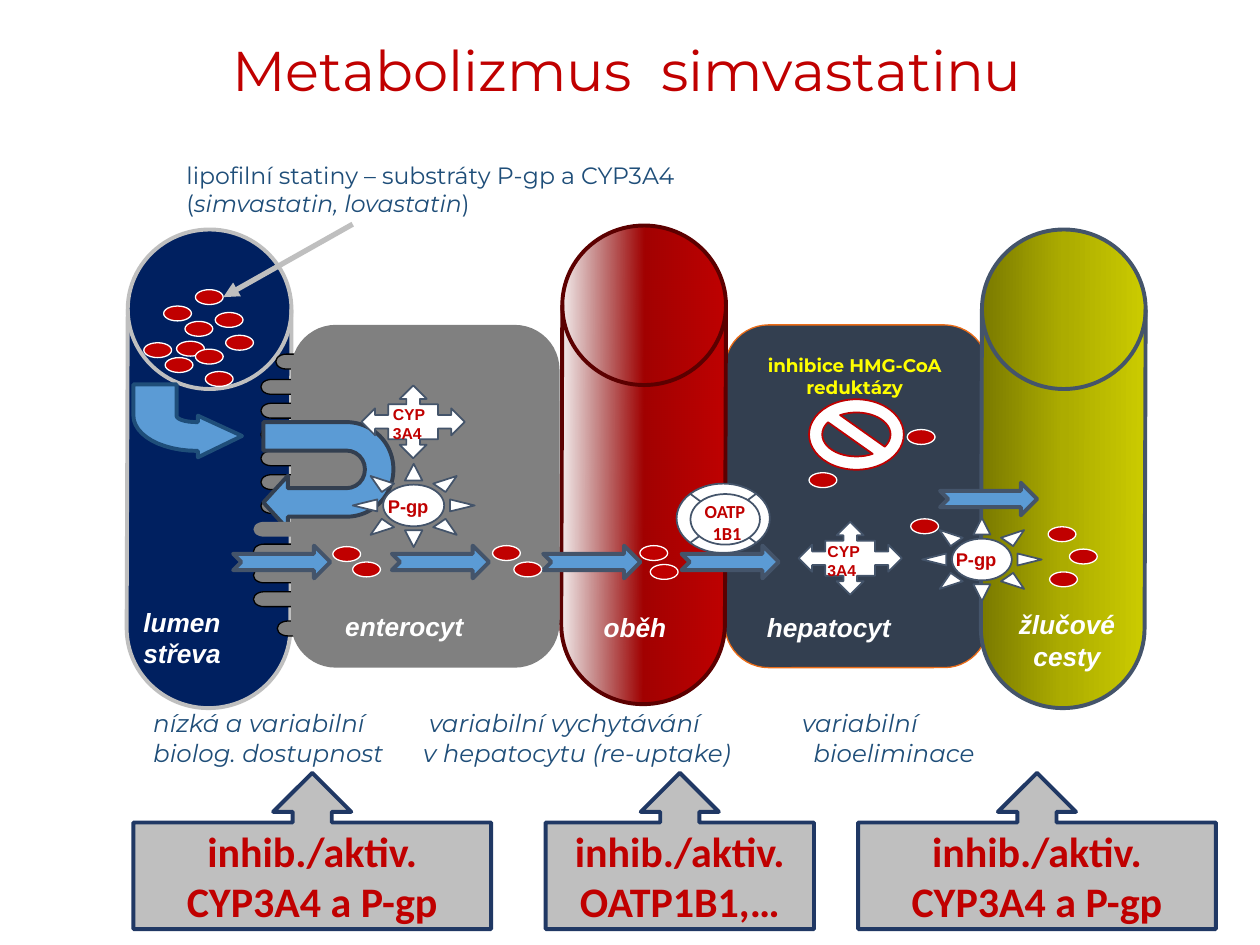
"""Build a one-slide diagram of simvastatin metabolism from gut to bile."""
from math import cos, pi, sin
from pptx import Presentation
from pptx.dml.color import RGBColor as RGB
from pptx.enum.shapes import MSO_CONNECTOR as Link, MSO_SHAPE as Form
from pptx.enum.text import MSO_ANCHOR as Anchor, PP_ALIGN as Align
from pptx.oxml import parse_xml
from pptx.oxml.ns import nsdecls, qn
from pptx.util import Cm, Pt


class Theme:
    red, white, gray, silver = "C00000", "FFFFFF", "808080", "BFBFBF"
    slate, dark, navy, frame = "44546A", "333F50", "002060", "203864"
    blue, ink, yellow, orange = "5B9BD5", "1F4E79", "FFFF00", "EB6C17"
    wine, black = "5C0000", "000000"
    blood = [(0, "720000", 6), (50, "A20000", 100), (100, "C00000", 100)]
    bile = [(0, "797900", 100), (50, "ACAC00", 100), (100, "CCCC00", 100)]
    sans, body, head = "Arial", "Calibri", "Montserrat"
    title, call, organ, note, intro, tag, small = 32, 24, 15, 14, 13.5, 10.5, 9


def paint(item, fill, line=None, width=1):
    item.shadow.inherit = False
    if isinstance(fill, list):
        stops = "".join(
            f'<a:gs pos="{pos * 1000}"><a:srgbClr val="{color}">'
            f'<a:alpha val="{alpha * 1000}"/></a:srgbClr></a:gs>'
            for pos, color, alpha in fill)
        item.fill.background()
        props = item._element.spPr
        props.replace(props.find(qn("a:noFill")), parse_xml(
            f'<a:gradFill rotWithShape="1" {nsdecls("a")}><a:gsLst>{stops}</a:gsLst>'
            '<a:lin ang="5400000" scaled="0"/></a:gradFill>'))
    else:
        item.fill.solid()
        item.fill.fore_color.rgb = RGB.from_string(fill)
    if line:
        item.line.color.rgb = RGB.from_string(line)
        item.line.width = Pt(width)
    else:
        item.line.fill.background()
    return item


def write(item, text, font, size, color, bold=False, slant=False, align=Align.LEFT, wrap=True):
    frame = item.text_frame
    frame.text = text
    frame.word_wrap = wrap
    for para in frame.paragraphs:
        para.alignment = align
        for run in para.runs:
            run.font.name, run.font.size = font, Pt(size)
            run.font.bold, run.font.italic = bold, slant
            run.font.color.rgb = RGB.from_string(color)
    return frame


deck = Presentation()
deck.slide_width, deck.slide_height = Cm(25.4), Cm(19.05)
slide = deck.slides.add_slide(deck.slide_layouts[6])
shapes = slide.shapes
add, box = shapes.add_shape, shapes.add_textbox

drums = [
    (8.15, 7.72, Theme.blood, Theme.wine),
    (16.61, 7.8, Theme.bile, Theme.slate),
    (-0.61, 7.8, Theme.navy, Theme.silver),
]
hepar = add(Form.ROUNDED_RECTANGLE, Cm(14.61), Cm(6.55), Cm(5.31), Cm(6.91))
paint(hepar, Theme.dark, Theme.orange, 0.75)
for left, top, fill, line in drums:
    drum = add(Form.FLOWCHART_DIRECT_ACCESS_STORAGE, Cm(left), Cm(top), Cm(9.65), Cm(3.3))
    drum.rotation = 270.2
    paint(drum, fill, line, 2.25)

villi = [(5.56, 7.14)] + [(5.26, 7.65 + 0.48 * row) for row in range(6)]
villi += [(5.11, 10.97 + 0.48 * row) for row in range(3)] + [(5.59, 12.52)]
for left, top in villi:
    villus = add(Form.FLOWCHART_TERMINATOR, Cm(left), Cm(top), Cm(1.32), Cm(0.3))
    paint(villus, Theme.gray, Theme.black, 0.75)
gut = add(Form.ROUNDED_RECTANGLE, Cm(5.87), Cm(6.55), Cm(5.41), Cm(6.91))
paint(gut, Theme.gray)

turn = add(Form.U_TURN_ARROW, Cm(5.54), Cm(8.28), Cm(2.16), Cm(2.62))
turn.rotation = 90
for spot, value in enumerate((0.266, 0.25, 0.228, 0.438, 1)):
    turn.adjustments[spot] = value
paint(turn, Theme.blue, Theme.dark, 2.25)
last = add(Form.FLOWCHART_TERMINATOR, Cm(5.11), Cm(10.52), Cm(1.32), Cm(0.3))
paint(last, Theme.gray)

steps = [step * pi / 24 for step in range(13)]
outer = [(3.96 - 1.27 * sin(a), 8.38 + 0.71 * cos(a)) for a in steps]
inner = [(3.96 - 0.4 * cos(a), 8.38 + 0.13 * sin(a)) for a in steps]
bend = [(3.99, 9.22), (3.99, 9.09), *outer, (2.69, 7.75), (3.56, 7.75),
        *inner, (3.99, 8.51), (3.99, 8.38)]
curve = shapes.build_freeform(Cm(4.88), Cm(8.79))
curve.add_line_segments([(Cm(x), Cm(y)) for x, y in bend], close=True)
paint(curve.convert_to_shape(), Theme.blue, Theme.ink, 2.25)

signs = [
    (Form.FLOWCHART_SUMMING_JUNCTION, 13.64, 9.75, 1.88, 1.4, Theme.slate),
    (Form.OVAL, 13.92, 9.96, 1.4, 1.02, Theme.slate),
    (Form.NO_SYMBOL, 16.31, 8.05, 1.91, 1.42, Theme.red),
    (Form.SUN, 18.59, 10.44, 2.41, 1.68, Theme.slate),
    (Form.SUN, 7.11, 9.35, 2.46, 1.68, Theme.slate),
    (Form.QUAD_ARROW_CALLOUT, 7.29, 7.77, 2.08, 1.47, Theme.slate),
    (Form.QUAD_ARROW_CALLOUT, 16.1, 10.52, 2.08, 1.47, Theme.slate),
]
for kind, left, top, wide, high, line in signs:
    paint(add(kind, Cm(left), Cm(top), Cm(wide), Cm(high)), Theme.white, line)

flows = [(4.7, 11), (7.9, 11), (10.95, 11), (13.74, 11), (18.95, 9.73)]
for left, top in flows:
    flow = add(Form.NOTCHED_RIGHT_ARROW, Cm(left), Cm(top), Cm(1.96), Cm(0.66))
    paint(flow, Theme.blue, Theme.slate, 2.25)

pills = [
    (2.9, 6.91), (3.33, 7.21), (3.56, 6.88), (3.94, 7.04), (4.14, 7.49), (3.3, 6.17),
    (3.73, 6.48), (3.94, 5.84), (4.34, 6.3), (4.55, 6.76), (6.71, 11.02), (7.11, 11.33),
    (9.93, 11), (10.36, 11.33), (12.9, 11), (13.11, 11.38), (16.31, 9.53), (18.29, 8.66),
    (18.36, 10.46), (21.13, 10.62), (21.56, 11.07), (21.16, 11.53),
]
for left, top in pills:
    pill = add(Form.OVAL, Cm(left), Cm(top), Cm(0.56), Cm(0.3))
    paint(pill, Theme.red, Theme.white, 0.75)

organs = [
    ("lumen\nstřeva", 2.64, 12.09, 2.67, 1.55, Align.LEFT, True),
    ("enterocyt", 6.71, 12.17, 2.92, 0.89, Align.LEFT, False),
    ("oběh", 11.91, 12.19, 1.78, 0.89, Align.CENTER, False),
    ("hepatocyt", 15.21, 12.19, 3.86, 0.89, Align.LEFT, True),
    ("žlučové\ncesty", 19.91, 12.14, 3.2, 1.55, Align.CENTER, True),
]
for text, left, top, wide, high, align, wrap in organs:
    write(box(Cm(left), Cm(top), Cm(wide), Cm(high)), text, Theme.sans, Theme.organ,
          Theme.white, True, True, align, wrap)

tags = [
    ("OATP\n 1B1", 13.61, 9.96, 2.01, 1.14, Theme.body, Theme.tag, Theme.red, Align.CENTER, True),
    ("P-gp", 19.02, 10.92, 1.35, 0.71, Theme.sans, Theme.tag, Theme.red, Align.LEFT, False),
    ("P-gp", 7.57, 9.86, 1.35, 0.71, Theme.sans, Theme.tag, Theme.red, Align.LEFT, False),
    ("CYP\n3A4", 7.67, 8.03, 1.17, 1.02, Theme.sans, Theme.small, Theme.red, Align.LEFT, False),
    ("CYP\n3A4", 16.43, 10.8, 1.17, 1.02, Theme.sans, Theme.small, Theme.red, Align.LEFT, False),
    ("inhibice HMG-CoA\nreduktázy", 14.4, 7.01, 5.66, 1.14, Theme.head, Theme.tag,
     Theme.yellow, Align.CENTER, True),
]
for text, left, top, wide, high, font, size, color, align, wrap in tags:
    write(box(Cm(left), Cm(top), Cm(wide), Cm(high)), text, font, size, color, True,
          False, align, wrap)

lead = shapes.add_connector(Link.STRAIGHT, Cm(7.11), Cm(4.52), Cm(4.5), Cm(5.99))
lead.line.color.rgb = RGB.from_string(Theme.silver)
lead.line.width = Pt(3)
lead.line._get_or_add_ln().append(parse_xml(f'<a:tailEnd type="triangle" {nsdecls("a")}/>'))
lead._element.spPr.append(parse_xml(f'<a:effectLst {nsdecls("a")}/>'))

intro = write(box(Cm(3.51), Cm(3.12), Cm(16.26), Cm(1.98)),
              "lipofilní statiny – substráty P-gp a CYP3A4\n(",
              Theme.head, Theme.intro, Theme.ink)
for text, slant in (("simvastatin, lovastatin", True), (")", False)):
    run = intro.paragraphs[1].add_run()
    run.text = text
    run.font.name, run.font.size, run.font.italic = Theme.head, Pt(Theme.intro), slant
    run.font.color.rgb = RGB.from_string(Theme.ink)

notes = write(box(Cm(2.84), Cm(14.15), Cm(21.84), Cm(1.45)),
              "nízká a variabilní\tvariabilní vychytávání\tvariabilní\n"
              "biolog. dostupnost\tv hepatocytu (re-uptake)\tbioeliminace",
              Theme.head, Theme.note, Theme.ink, slant=True)
for para, stops in zip(notes.paragraphs, ((5.56, 13.08), (5.44, 13.31))):
    tabs = "".join(f'<a:tab pos="{Cm(stop)}" algn="l"/>' for stop in stops)
    para._p.get_or_add_pPr().append(parse_xml(f'<a:tabLst {nsdecls("a")}>{tabs}</a:tabLst>'))

title = write(box(Cm(0), Cm(-0.08), Cm(25.3), Cm(3.12)), "Metabolizmus  simvastatinu",
              Theme.head, Theme.title, Theme.red, align=Align.CENTER)
title.vertical_anchor = Anchor.MIDDLE
title.paragraphs[0].line_spacing = 0.9

calls = [(2.69, 7.21, "CYP3A4 a P-gp"), (11, 5.41, "OATP1B1,…"), (17.3, 7.21, "CYP3A4 a P-gp")]
for left, wide, name in calls:
    call = add(Form.UP_ARROW_CALLOUT, Cm(left), Cm(15.58), Cm(wide), Cm(3.15))
    for spot, value in enumerate((0.25, 0.25, 0.25, 0.682)):
        call.adjustments[spot] = value
    paint(call, Theme.silver, Theme.frame, 2.25)
    frame = write(call, f"inhib./aktiv.\n{name}", Theme.body, Theme.call, Theme.red, True,
                  align=Align.CENTER)
    frame.vertical_anchor = Anchor.MIDDLE

deck.save("out.pptx")
